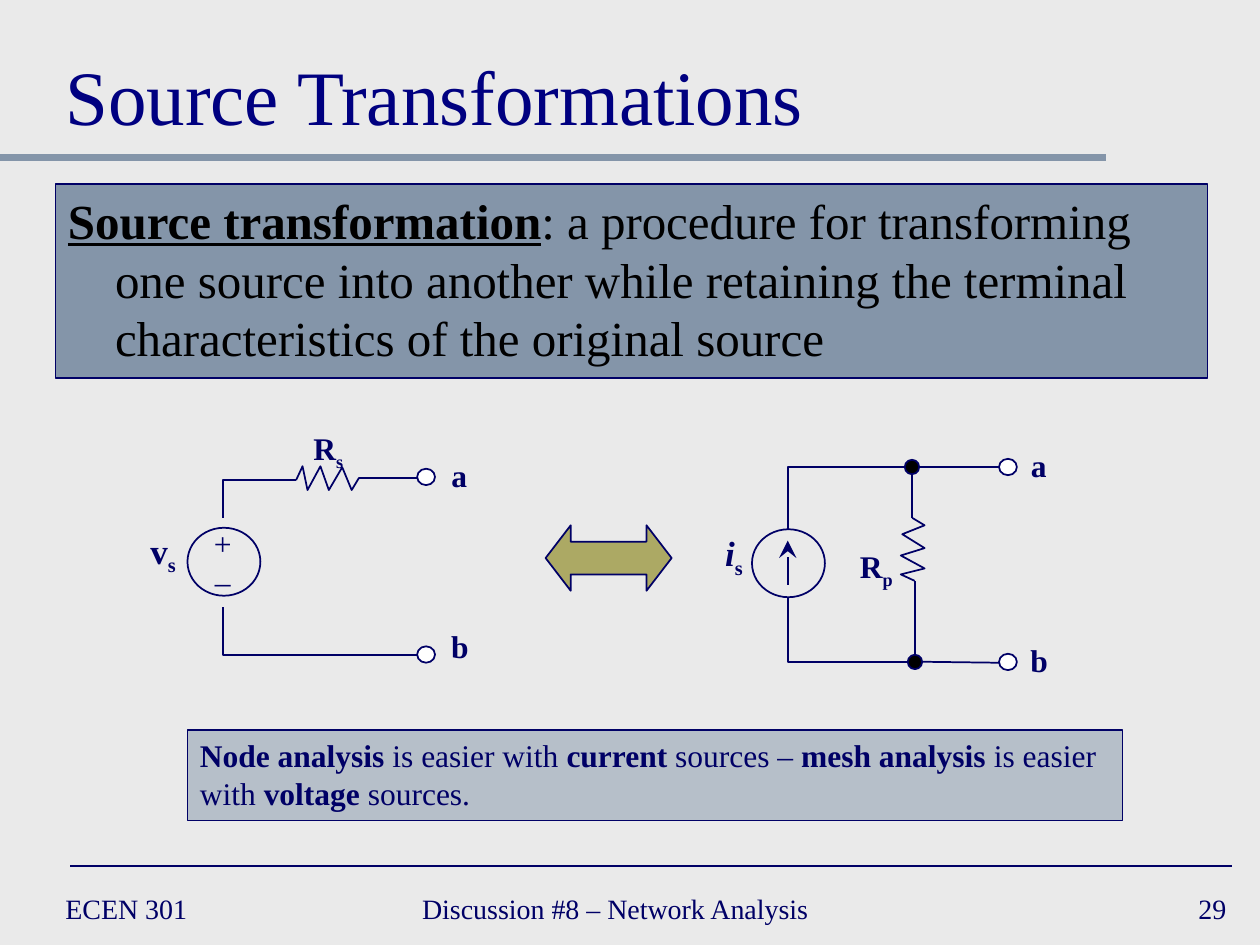
from lxml.etree import SubElement
from pptx import Presentation
from pptx.dml.color import RGBColor
from pptx.enum.shapes import MSO_CONNECTOR, MSO_SHAPE
from pptx.enum.text import MSO_ANCHOR, PP_ALIGN
from pptx.oxml.ns import qn
from pptx.util import Cm, Pt

HUES = {"page": "EAEAEA", "ink": "000066", "title": "000080", "slate": "8495A9",
        "black": "000000", "white": "FFFFFF", "olive": "ACA964"}
FACE = "Times New Roman"
LEFT, MID, RIGHT = PP_ALIGN.LEFT, PP_ALIGN.CENTER, PP_ALIGN.RIGHT

# Runs are (text, marks): b bold, i italic, u underlined, s subscript
TITLE = [("Source Transformations", "")]
BODY = [("Source transformation", "bu"),
        (": a procedure for transforming one source into another while "
         "retaining the terminal characteristics of the original source", "")]
NOTE = [("Node analysis", "b"), (" is easier with ", ""), ("current", "b"),
        (" sources – ", ""), ("mesh analysis", "b"), (" is easier with ", ""),
        ("voltage", "b"), (" sources.", "")]
FOOT = [("ECEN 301", 1.07, 5.51, LEFT),
        ("Discussion #8 – Network Analysis", 8.26, 9.73, LEFT),
        ("29", 19.69, 5.28, RIGHT)]

# Circuit labels: runs, box, size
TAGS = [
    ([("v", "b"), ("s", "bs")], (2.77, 10.54, 1.04, 1.09), 20),
    ([("R", "b"), ("s", "bs")], (6.05, 8.53, 1.14, 1.02), 18),
    ([("i", "bi"), ("s", "bs")], (14.35, 10.59, 0.89, 1.09), 20),
    ([("R", "b"), ("p", "bs")], (17.07, 10.9, 1.19, 1.02), 18),
    ([("a", "b")], (8.84, 9.07, 0.84, 1.02), 18),
    ([("b", "b")], (8.84, 12.52, 0.86, 1.02), 18),
    ([("a", "b")], (20.52, 8.86, 0.84, 1.02), 18),
    ([("b", "b")], (20.52, 12.8, 0.86, 1.02), 18),
]

# Ellipses: fill, size, top left corners
ROUNDS = [
    (None, (1.47, 1.37), [(3.78, 10.64), (15.16, 10.67)]),
    ("white", (0.36, 0.33), [(8.41, 13.03), (8.41, 9.45), (20.14, 13.18), (20.14, 9.25)]),
    ("black", (0.29, 0.29), [(18.3, 13.2), (18.24, 9.27)]),
]

WIRES = [
    # voltage source side
    [(4.5, 12.24), (4.5, 13.21), (8.41, 13.21)],
    [(4.5, 10.44), (4.5, 9.68), (5.97, 9.68)],
    [(8.41, 9.63), (7.24, 9.63)],
    [(5.97, 9.68), (6.1, 9.4), (6.2, 9.88), (6.46, 9.4),
     (6.63, 9.88), (6.9, 9.42), (7.09, 9.88), (7.24, 9.63)],
    # current source side
    [(15.88, 12.04), (15.88, 13.34), (18.31, 13.34)],
    [(15.88, 10.67), (15.88, 9.42), (18.24, 9.42)],
    [(18.44, 13.18), (18.44, 11.71)],
    [(18.39, 9.55), (18.39, 10.44)],
    [(18.59, 13.34), (20.14, 13.36)],
    [(18.54, 9.42), (20.14, 9.42)],
    [(18.39, 10.44), (18.64, 10.59), (18.19, 10.77), (18.64, 11.05),
     (18.16, 11.2), (18.64, 11.46), (18.16, 11.58), (18.44, 11.71)],
]

deck = Presentation()
deck.slide_width, deck.slide_height = Cm(25.4), Cm(19.05)
slide = deck.slides.add_slide(deck.slide_layouts[6])
parts = slide.shapes


def tint(hue):
    return RGBColor.from_string(HUES[hue])


def style(shape, fill, width=1):
    shape.shadow.inherit = False
    if fill:
        shape.fill.solid()
        shape.fill.fore_color.rgb = tint(fill)
    else:
        shape.fill.background()
    shape.line.color.rgb = tint("ink")
    shape.line.width = Pt(width)


def form(kind, area, fill, width=1):
    shape = parts.add_shape(kind, *map(Cm, area))
    style(shape, fill, width)
    return shape


def write(shape, lines, size, hue="ink", align=LEFT, wrap=True, anchor=MSO_ANCHOR.TOP):
    frame = shape.text_frame
    frame.word_wrap, frame.vertical_anchor = wrap, anchor
    for n, runs in enumerate(lines):
        para = frame.add_paragraph() if n else frame.paragraphs[0]
        para.alignment = align
        font = para.font
        font.name, font.size, font.color.rgb = FACE, Pt(size), tint(hue)
        if all("b" in marks for _, marks in runs):
            font.bold = True
        for text, marks in runs:
            run = para.add_run()
            run.text = text
            if "b" in marks and not font.bold:
                run.font.bold = True
            if "i" in marks:
                run.font.italic = True
            if "u" in marks:
                run.font.underline = True
            if "s" in marks:
                run._r.get_or_add_rPr().set("baseline", "-25000")
    return frame


def label(area, lines, size, **look):
    return write(parts.add_textbox(*map(Cm, area)), lines, size, **look)


def line(start, end, hue="ink", width=1):
    wire = parts.add_connector(MSO_CONNECTOR.STRAIGHT, *map(Cm, start + end))
    wire.line.color.rgb = tint(hue)
    wire.line.width = Pt(width)
    SubElement(wire._element.spPr, qn("a:effectLst"))
    return wire


def trace(points):
    if len(points) == 2:
        return line(*points)
    spots = [(Cm(x), Cm(y)) for x, y in points]
    pen = parts.build_freeform(*spots[0])
    pen.add_line_segments(spots[1:], close=False)
    shape = pen.convert_to_shape()
    style(shape, None)
    return shape


# Page, rules and footer
slide.background.fill.solid()
slide.background.fill.fore_color.rgb = tint("page")
line((0, 3.18), (22.3, 3.18), "slate", 4)
line((1.42, 17.46), (24.84, 17.46))
for text, left, wide, align in FOOT:
    label((left, 17.78, wide, 1.07), [[(text, "")]], 16, align=align,
          anchor=MSO_ANCHOR.MIDDLE)

# Title and definition
label((1.07, 0.43, 23.29, 2.54), [TITLE], 44, hue="title", anchor=MSO_ANCHOR.BOTTOM)
body = form(MSO_SHAPE.RECTANGLE, (1.12, 3.71, 23.22, 3.91), "slate", 0.75)
props = write(body, [BODY], 28, "black").paragraphs[0]._p.get_or_add_pPr()
props.set("marL", str(Cm(0.95)))
props.set("indent", str(Cm(-0.95)))

# Circuits
for fill, size, spots in ROUNDS:
    for spot in spots:
        form(MSO_SHAPE.OVAL, spot + size, fill)
for points in WIRES:
    trace(points)
flow = line((15.88, 11.79), (15.88, 10.9))
SubElement(flow.line._get_or_add_ln(), qn("a:tailEnd"), type="stealth", w="lg", len="lg")
label((4.06, 10.44, 0.86, 1.78), [[("+", "")], [("–", "")]], 18, align=MID, wrap=False)
for runs, area, size in TAGS:
    label(area, [runs], size, align=MID, wrap=False)

# Remark and double arrow
note = form(MSO_SHAPE.RECTANGLE, (3.78, 14.71, 18.85, 1.83), "slate")
write(note, [NOTE], 18)
shade = note._element.spPr.find(qn("a:solidFill"))[0]
SubElement(shade, qn("a:alpha"), val="50000")
swap = form(MSO_SHAPE.LEFT_RIGHT_ARROW, (11, 10.59, 2.54, 1.32), "olive")
swap.adjustments[0], swap.adjustments[1] = 0.5, 0.384

deck.save("out.pptx")
